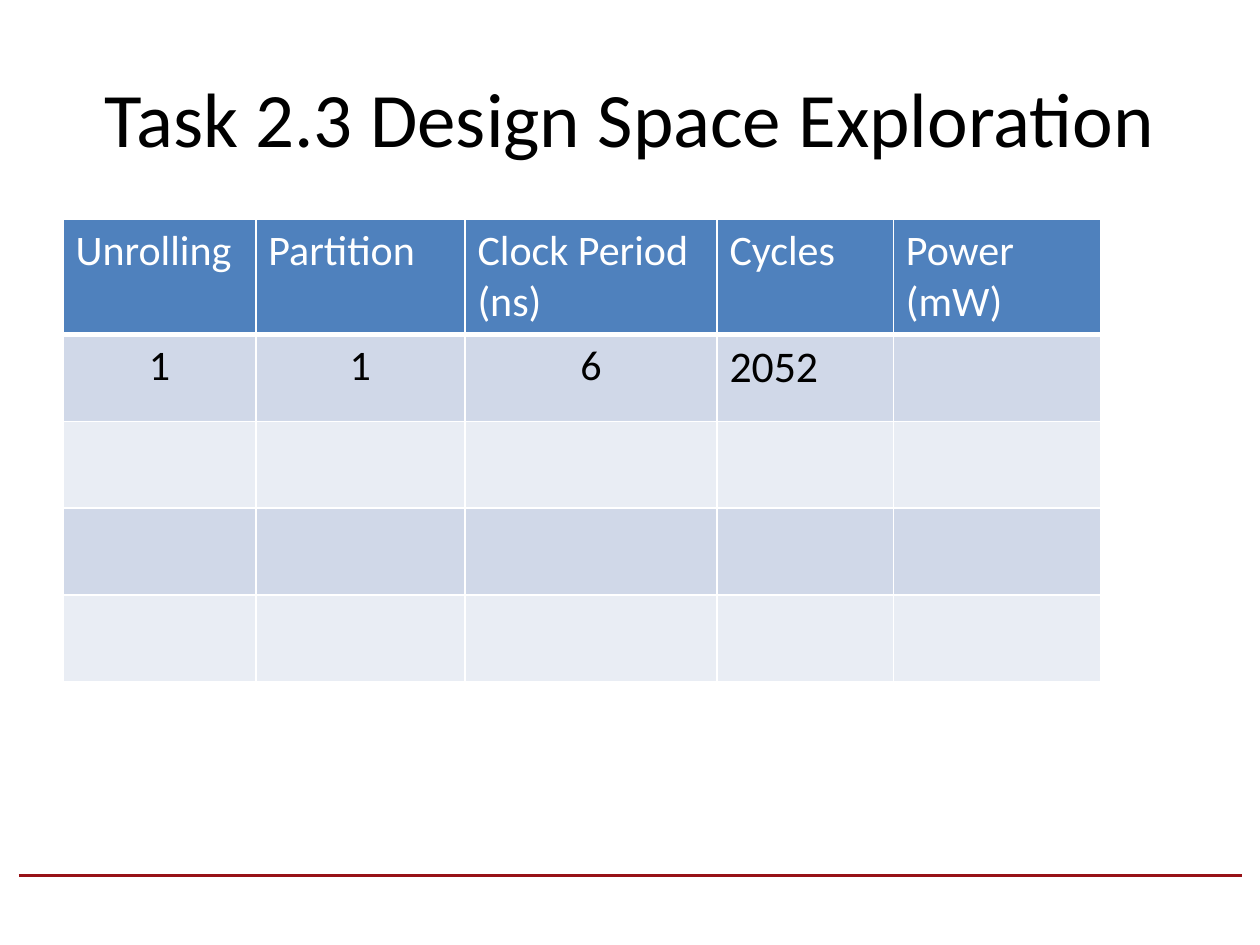
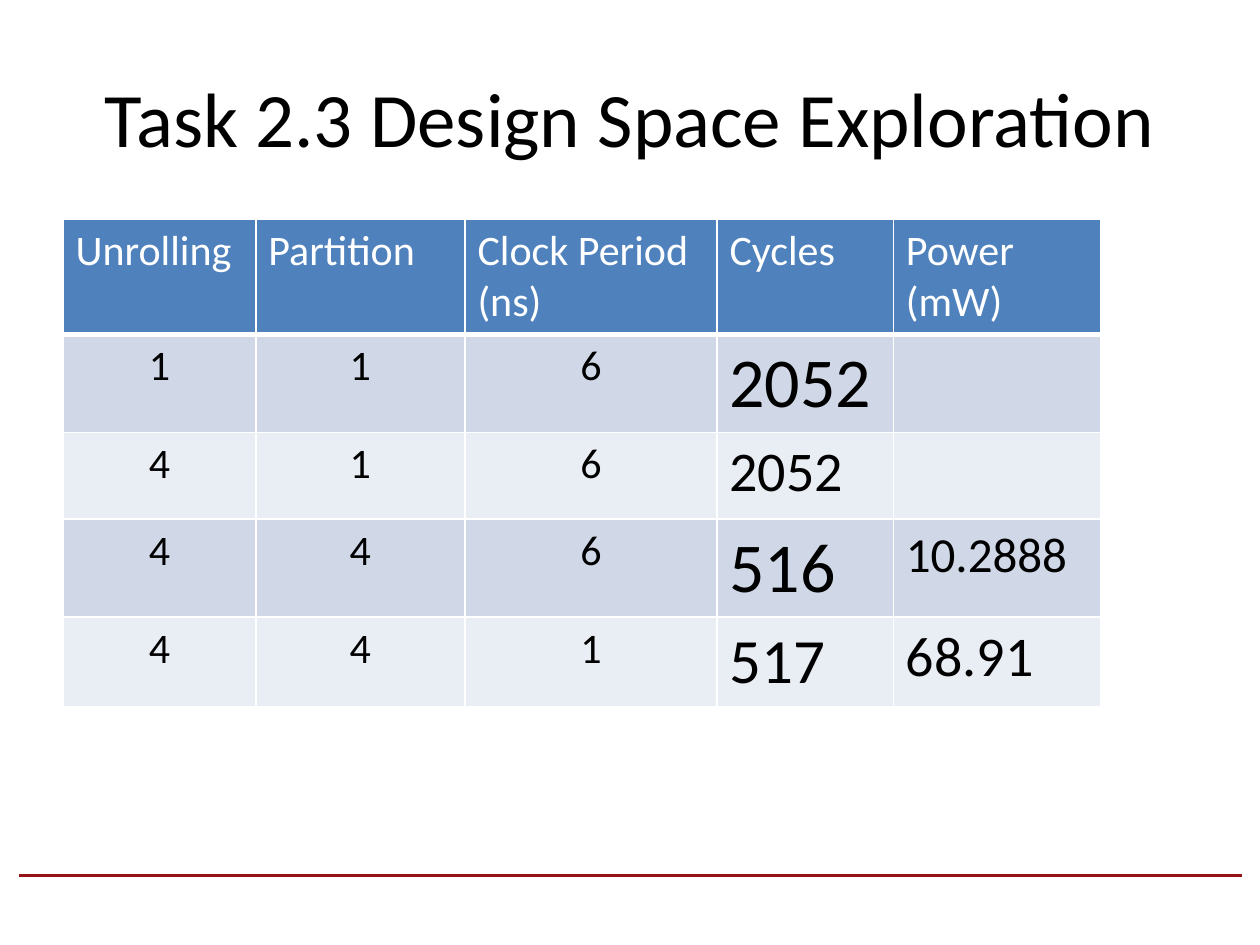
from lxml.etree import SubElement
from pptx import Presentation
from pptx.dml.color import RGBColor
from pptx.enum.shapes import MSO_CONNECTOR as Connector
from pptx.enum.text import MSO_ANCHOR as Anchor, PP_ALIGN as Align
from pptx.oxml.ns import qn
from pptx.util import Inches, Pt

FONT = "Calibri"
BLACK, WHITE, RULE_RED = "000000", "FFFFFF", "971217"
HEADER_BLUE, BANDS = "4F81BD", ("D0D8E8", "E9EDF4")
TITLE = "Task 2.3 Design Space Exploration"
TITLE_BOX = (0.5, 0.3, 9, 1.25)
TABLE_CORNER = (0.5, 1.74)
COLUMN_WIDTHS = (1.53, 1.66, 2, 1.4, 1.65)
HEADER_HEIGHT = 0.9
HEADINGS = ("Unrolling", "Partition", "Clock Period (ns)", "Cycles", "Power (mW)")
CENTRED_COLUMNS = 3
BODY_SIZE = 24
EMPTY_ROW = ("",) * len(HEADINGS)

FIRST_RESULT = [("1", "1", "6", "2052", "")] + [EMPTY_ROW] * 3
ALL_RESULTS = [
    ("1", "1", "6", "2052", ""),
    ("4", "1", "6", "2052", ""),
    ("4", "4", "6", "516", "10.2888"),
    ("4", "4", "1", "517", "68.91"),
]
RUNS = [
    (FIRST_RESULT, (0.69, 0.69, 0.69, 0.69), {(0, 3): 25}),
    (ALL_RESULTS, (0.69, 0.69, 0.7, 0.7),
     {(0, 3): 40, (1, 3): 32, (2, 3): 40, (2, 4): 28, (3, 3): 36, (3, 4): 32}),
]


def color(value):
    """Turn a hex string into a colour."""
    return RGBColor.from_string(value)


def style_font(font, size, value):
    """Apply the deck's regular font in a given size and colour."""
    font.name, font.size, font.bold = FONT, Pt(size), False
    font.color.rgb = color(value)


def add_title(page, box):
    """Place and format the slide title."""
    title = page.shapes.title
    title.left, title.top, title.width, title.height = map(Inches, box)
    frame = title.text_frame
    frame.text = TITLE
    frame.word_wrap = True
    frame.vertical_anchor = Anchor.MIDDLE
    para = frame.paragraphs[0]
    para.alignment = Align.CENTER
    style_font(para.runs[0].font, 44, BLACK)


def add_footer_rule(page, left, right, top):
    """Draw the red line above the footer."""
    rule = page.shapes.add_connector(
        Connector.STRAIGHT, Inches(left), Inches(top), Inches(right), Inches(top))
    rule.line.color.rgb = color(RULE_RED)
    rule.line.width = Pt(2)
    SubElement(rule._element.spPr, qn("a:effectLst"))


def set_borders(cell, bottom_width):
    """Give a cell white borders, with its own bottom width."""
    properties = cell._tc.get_or_add_tcPr()
    for side, width in zip("LRTB", (1, 1, 1, bottom_width)):
        line = SubElement(properties, qn(f"a:ln{side}"), w=str(Pt(width)))
        fill = SubElement(line, qn("a:solidFill"))
        SubElement(fill, qn("a:srgbClr"), val=WHITE)


def fill_cell(cell, text, fill, text_color, size, align, bottom_width=1):
    """Write and format one table cell."""
    set_borders(cell, bottom_width)
    cell.fill.solid()
    cell.fill.fore_color.rgb = color(fill)
    if text:
        cell.text_frame.text = text
        para = cell.text_frame.paragraphs[0]
        para.alignment = align
        style_font(para.runs[0].font, size, text_color)


def add_results_table(page, corner, results, heights, sizes):
    """Add the exploration table with its banded result rows."""
    row_heights = (HEADER_HEIGHT, *heights)
    table = page.shapes.add_table(
        len(row_heights), len(HEADINGS), *map(Inches, corner),
        Inches(sum(COLUMN_WIDTHS)), Inches(sum(row_heights))).table
    for column, width in zip(table.columns, COLUMN_WIDTHS):
        column.width = Inches(width)
    for row, height in zip(table.rows, row_heights):
        row.height = Inches(height)
    for number, heading in enumerate(HEADINGS):
        fill_cell(table.cell(0, number), heading, HEADER_BLUE, WHITE,
                  BODY_SIZE, Align.LEFT, bottom_width=3)
    for index, result in enumerate(results):
        for number, value in enumerate(result):
            align = Align.CENTER if number < CENTRED_COLUMNS else Align.LEFT
            fill_cell(table.cell(index + 1, number), value, BANDS[index % 2], BLACK,
                      sizes.get((index, number), BODY_SIZE), align)


def add_results_page(deck, results, heights, sizes):
    """Add one slide with title, results table and footer rule."""
    page = deck.slides.add_slide(deck.slide_layouts[5])
    add_footer_rule(page, 0.15, 9.86, 6.95)
    add_title(page, TITLE_BOX)
    add_results_table(page, TABLE_CORNER, results, heights, sizes)


def main():
    """Build and save the deck."""
    deck = Presentation()
    deck.slide_width, deck.slide_height = Inches(10), Inches(7.5)
    for results, heights, sizes in RUNS:
        add_results_page(deck, results, heights, sizes)
    deck.save("out.pptx")


if __name__ == "__main__":
    main()
